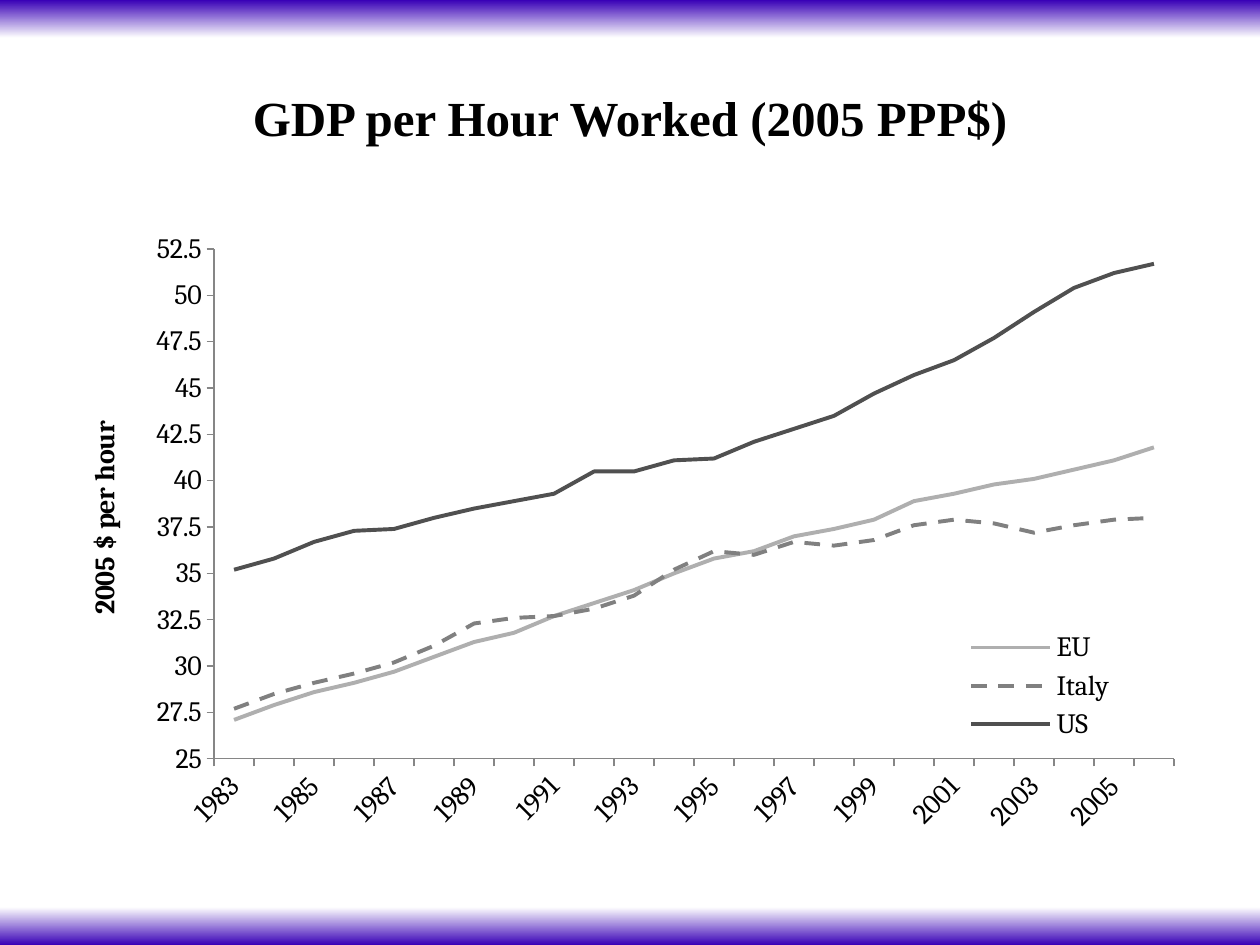
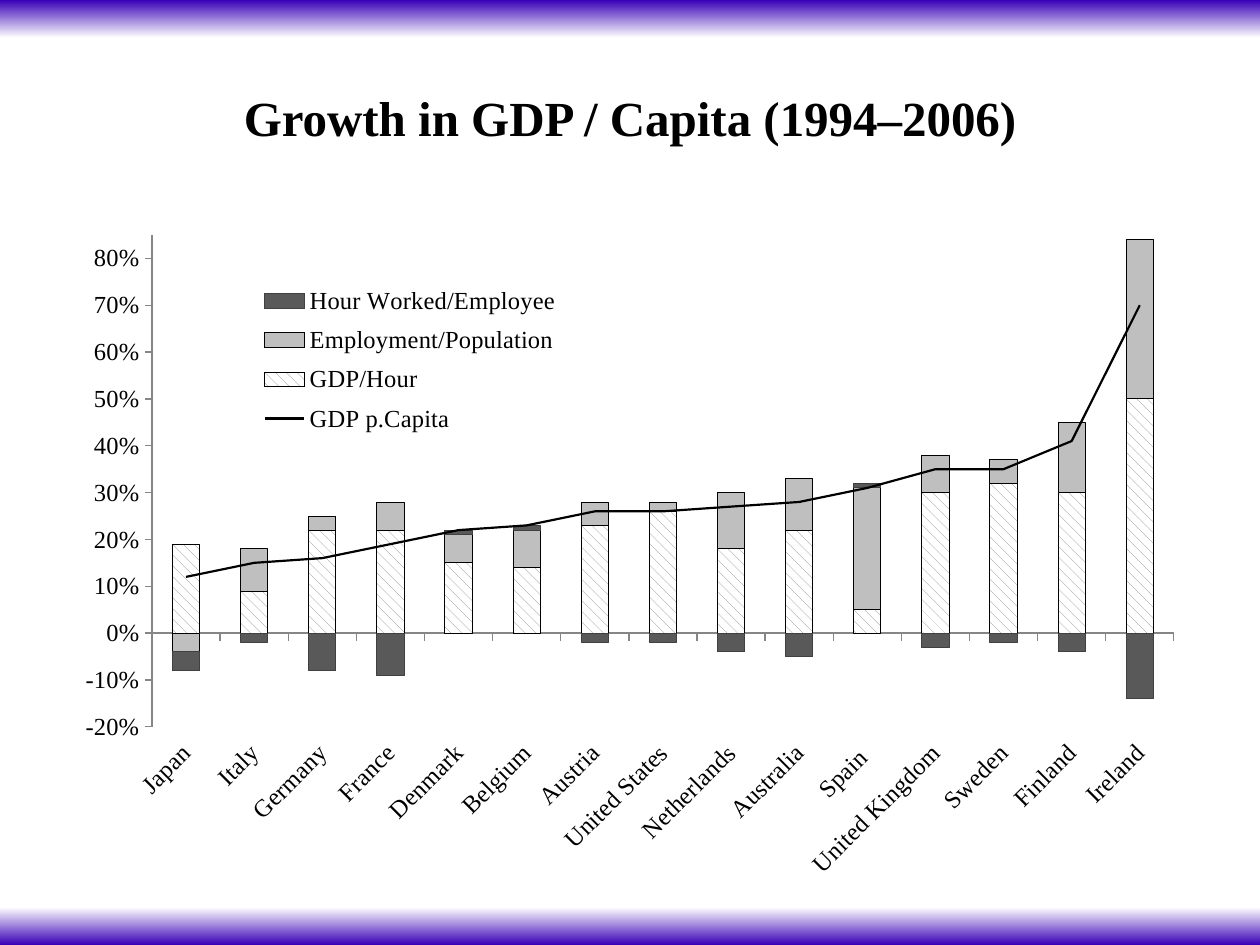
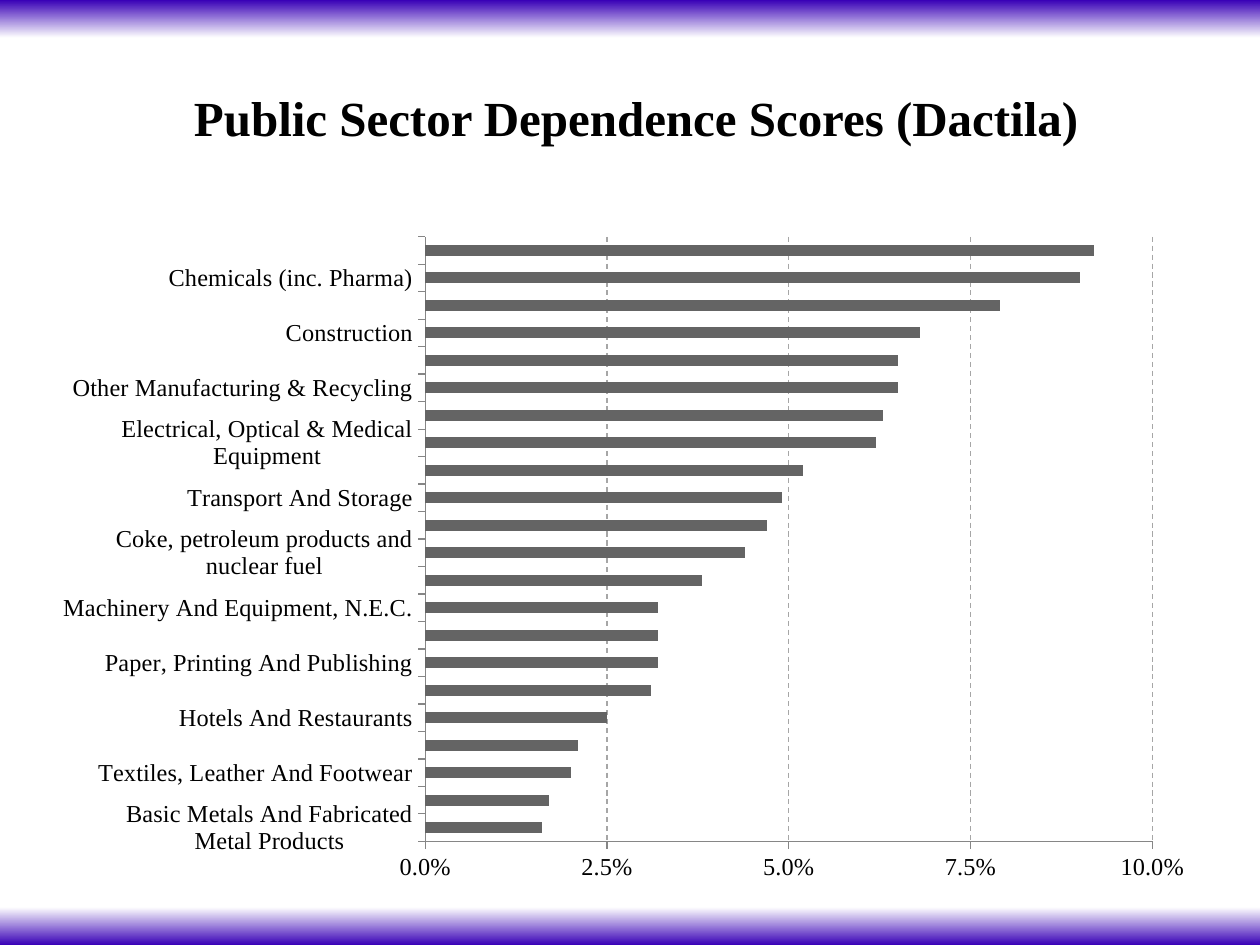
from lxml import etree
from pptx import Presentation
from pptx.chart.data import CategoryChartData
from pptx.dml.color import RGBColor
from pptx.enum.chart import (XL_CHART_TYPE as ChartType, XL_LEGEND_POSITION as LegendPos,
                             XL_MARKER_STYLE as Marker, XL_TICK_LABEL_POSITION as LabelPos,
                             XL_TICK_MARK as Tick)
from pptx.enum.dml import MSO_LINE_DASH_STYLE as Dash, MSO_PATTERN_TYPE as Pattern
from pptx.enum.text import MSO_ANCHOR, PP_ALIGN
from pptx.oxml import parse_xml
from pptx.oxml.ns import nsdecls, qn
from pptx.util import Emu, Pt

SERIF, CHART_SERIF = "Times New Roman", "Cambria"
BLACK, WHITE, PURPLE, AXIS_GREY = "000000", "FFFFFF", "3800B6", "868686"
TITLE_BOX = (63, 38, 1134, 158)
CHART_LEFT, CHART_TOP, CHART_WIDTH = 63, 221, 1134

YEARS = [str(y) for y in range(1983, 2007)]
# name: (colour, dash, values)
HOURLY_GDP = {
    "EU": ("AFAFAF", Dash.SOLID,
           [27.1, 27.9, 28.6, 29.1, 29.7, 30.5, 31.3, 31.8, 32.7, 33.4, 34.1, 35,
            35.8, 36.2, 37, 37.4, 37.9, 38.9, 39.3, 39.8, 40.1, 40.6, 41.1, 41.8]),
    "Italy": ("808080", Dash.DASH,
              [27.7, 28.5, 29.1, 29.6, 30.2, 31.1, 32.3, 32.6, 32.7, 33.1, 33.8, 35.2,
               36.2, 36, 36.7, 36.5, 36.8, 37.6, 37.9, 37.7, 37.2, 37.6, 37.9, 38]),
    "US": ("505050", Dash.SOLID,
           [35.2, 35.8, 36.7, 37.3, 37.4, 38, 38.5, 38.9, 39.3, 40.5, 40.5, 41.1,
            41.2, 42.1, 42.8, 43.5, 44.7, 45.7, 46.5, 47.7, 49.1, 50.4, 51.2, 51.7]),
}

COUNTRIES = ["Japan", "Italy", "Germany", "France", "Denmark", "Belgium", "Austria",
             "United States", "Netherlands", "Australia", "Spain ", "United Kingdom",
             "Sweden", "Finland", "Ireland"]
# The first series of the source data is unnamed and empty.
GROWTH = {
    "": [],
    "GDP/Hour": [0.19, 0.09, 0.22, 0.22, 0.15, 0.14, 0.23, 0.26, 0.18, 0.22, 0.05,
                 0.3, 0.32, 0.3, 0.5],
    "Employment/Population": [-0.04, 0.09, 0.03, 0.06, 0.06, 0.08, 0.05, 0.02, 0.12,
                              0.11, 0.26, 0.08, 0.05, 0.15, 0.34],
    "Hour Worked/Employee": [-0.04, -0.02, -0.08, -0.09, 0.01, 0.01, -0.02, -0.02,
                             -0.04, -0.05, 0.01, -0.03, -0.02, -0.04, -0.14],
    "GDP p.Capita": [0.12, 0.15, 0.16, 0.19, 0.22, 0.23, 0.26, 0.26, 0.27, 0.28,
                     0.31, 0.35, 0.35, 0.41, 0.7],
}

SECTOR_SCORES = {
    "Basic Metals And Fabricated Metal Products": 0.016,
    "Wood And Products Of Wood And Cork": 0.017,
    "Textiles, Leather And Footwear": 0.02,
    "Rubber and Plastic Products": 0.021,
    "Hotels And Restaurants": 0.025,
    "Wholesale and Retail Trade": 0.031,
    "Paper, Printing And Publishing": 0.032,
    "Mining And Quarrying": 0.032,
    "Machinery And Equipment, N.E.C.": 0.032,
    "Food Products, Beverages And Tobacco": 0.038,
    "Coke, petroleum products and nuclear fuel": 0.044,
    "Other Business Service Activities": 0.047,
    "Transport And Storage": 0.049,
    "Post And Telecommunications": 0.052,
    "Electrical, Optical & Medical Equipment": 0.062,
    "Financial Intermediation": 0.063,
    "Other Manufacturing & Recycling": 0.065,
    "Automotive": 0.065,
    "Construction": 0.068,
    "Electricity, Gas AndWater Supply": 0.079,
    "Chemicals (inc. Pharma)": 0.09,
    "Agriculture, Hunting, Forestry And Fishing": 0.092,
}


def px(n):
    return Emu(round(n * 914400 / 126))


def rgb(color):
    return RGBColor.from_string(color)


def set_line(fmt, color, width, dash=None):
    fmt.line.color.rgb = rgb(color)
    fmt.line.width = Pt(width)
    if dash is not None:
        fmt.line.dash_style = dash


def set_fill(fmt, color):
    fmt.fill.solid()
    fmt.fill.fore_color.rgb = rgb(color)


def paint_background(master):
    """Fade purple bands into white at the top and bottom edges."""
    fill = master.background.fill
    fill.gradient()
    fill.gradient_angle = 90
    stops = next(master.element.iter(qn("a:gsLst")))
    for stop in list(stops):
        stops.remove(stop)
    for percent, color in ((0, PURPLE), (4, WHITE), (50, WHITE), (96, WHITE), (100, PURPLE)):
        stops.append(parse_xml(f'<a:gs {nsdecls("a")} pos="{percent * 1000}">'
                               f'<a:srgbClr val="{color}"/></a:gs>'))


def add_titled_slide(prs, title):
    s = prs.slides.add_slide(prs.slide_layouts[5])
    sp = s.shapes.title
    sp.left, sp.top, sp.width, sp.height = map(px, TITLE_BOX)
    tf = sp.text_frame
    tf.text = title
    tf.vertical_anchor = MSO_ANCHOR.MIDDLE
    p = tf.paragraphs[0]
    p.alignment = PP_ALIGN.CENTER
    p.font.name, p.font.size, p.font.bold = SERIF, Pt(28), True
    p.font.color.rgb = rgb(BLACK)
    return s


def place(element, height, box, index=1, inner=False):
    """Lay out a chart part at a px box (or point) within a chart of the given height."""
    for old in element.findall(qn("c:layout")):
        element.remove(old)
    layout = etree.Element(qn("c:layout"))
    manual = etree.SubElement(layout, qn("c:manualLayout"))
    settings = [("layoutTarget", "inner")] if inner else []
    settings += [("xMode", "edge"), ("yMode", "edge")]
    totals = (CHART_WIDTH, height) * 2
    settings += [(tag, f"{n / total:.4f}") for tag, n, total in zip("xywh", box, totals)]
    for tag, value in settings:
        etree.SubElement(manual, qn(f"c:{tag}")).set("val", value)
    element.insert(index, layout)


def add_base_chart(s, kind, height, categories, series, font, size, plot_box):
    data = CategoryChartData()
    data.categories = categories
    for name, values in series.items():
        data.add_series(name, values)
    box = map(px, (CHART_LEFT, CHART_TOP, CHART_WIDTH, height))
    chart = s.shapes.add_chart(kind, *box, data).chart
    chart.has_title = chart.has_legend = False
    chart.font.name, chart.font.size = font, Pt(size)
    chart.font.color.rgb = rgb(BLACK)
    chart.plots[0].vary_by_categories = False
    for axis in (chart.category_axis, chart.value_axis):
        axis.has_major_gridlines = False
        axis.major_tick_mark, axis.minor_tick_mark = Tick.OUTSIDE, Tick.NONE
        set_line(axis.format, AXIS_GREY, 0.75)
    plot_area = chart.plots[0]._element.getparent()
    place(plot_area, height, plot_box, index=0, inner=True)
    return chart


def scale_values(axis, low, high, step, number_format):
    axis.minimum_scale, axis.maximum_scale, axis.major_unit = low, high, step
    axis.tick_labels.number_format = number_format
    axis.tick_labels.number_format_is_linked = False


def slant_labels(axis):
    axis.tick_labels.font.color.rgb = rgb(BLACK)
    next(axis._element.iter(qn("a:bodyPr"))).set("rot", "-2700000")


def add_legend(chart, position, height, box):
    chart.has_legend = True
    chart.legend.position = position
    chart.legend.include_in_layout = True
    place(chart.legend._element, height, box)


def drop_legend_entry(chart, index):
    chart.legend._element.insert(1, parse_xml(
        f'<c:legendEntry {nsdecls("c")}><c:idx val="{index}"/><c:delete val="1"/>'
        '</c:legendEntry>'))


def move_last_series_to_line(chart):
    bars = chart.plots[0]._element
    ser = bars.findall(qn("c:ser"))[-1]
    for tag in ("c:invertIfNegative", "c:spPr"):
        for child in ser.findall(qn(tag)):
            ser.remove(child)
    line = parse_xml(f'<c:lineChart {nsdecls("c")}><c:grouping val="standard"/>'
                     '<c:varyColors val="0"/></c:lineChart>')
    line.append(ser)
    etree.SubElement(line, qn("c:marker")).set("val", "1")
    for ax in bars.findall(qn("c:axId")):
        etree.SubElement(line, qn("c:axId")).set("val", ax.get("val"))
    bars.addnext(line)
    return chart.plots[1].series[0]


def build_hourly_gdp(prs):
    s = add_titled_slide(prs, "GDP per Hour Worked (2005 PPP$)")
    height = 624
    values = {name: row[2] for name, row in HOURLY_GDP.items()}
    chart = add_base_chart(s, ChartType.LINE, height, YEARS, values, CHART_SERIF, 16,
                           (151, 28, 960, 510))
    for ser, (color, dash, _) in zip(chart.plots[0].series, HOURLY_GDP.values()):
        set_line(ser.format, color, 2.25, dash)
        ser.marker.style = Marker.NONE
        ser.smooth = False
    slant_labels(chart.category_axis)
    axis = chart.value_axis
    scale_values(axis, 25, 52.5, 2.5, "General")
    tf = axis.axis_title.text_frame
    tf.text = "2005 $ per hour"
    font = tf.paragraphs[0].font
    font.name, font.size, font.bold = CHART_SERIF, Pt(16), True
    font.color.rgb = rgb(BLACK)
    next(axis.axis_title._element.iter(qn("a:bodyPr"))).set("rot", "-5400000")
    place(axis.axis_title._element, height, (18, 195))
    add_legend(chart, LegendPos.RIGHT, height, (897, 404, 160, 122))


def build_growth(prs):
    s = add_titled_slide(prs, "Growth in GDP / Capita (1994–2006)")
    height = 670
    chart = add_base_chart(s, ChartType.COLUMN_STACKED, height, COUNTRIES, GROWTH, SERIF, 14,
                           (89, 14, 1022, 492))
    capita = move_last_series_to_line(chart)
    set_line(capita.format, BLACK, 1.25)
    capita.marker.style = Marker.NONE
    capita.smooth = False

    bars = chart.plots[0]
    bars.gap_width, bars.overlap = 150, 100
    _, hourly, employment, hours = bars.series
    fill = hourly.format.fill
    fill.patterned()
    fill.pattern = Pattern.DASHED_DOWNWARD_DIAGONAL
    fill.fore_color.rgb, fill.back_color.rgb = rgb("848484"), rgb(WHITE)
    set_fill(employment.format, "BFBFBF")
    set_fill(hours.format, "595959")
    for ser, outline in ((hourly, BLACK), (employment, BLACK), (hours, "404040")):
        ser.invert_if_negative = False
        set_line(ser.format, outline, 0.5)

    chart.category_axis.tick_label_position = LabelPos.LOW
    slant_labels(chart.category_axis)
    scale_values(chart.value_axis, -0.2, 0.85, 0.1, "0%")
    add_legend(chart, LegendPos.LEFT, height, (192, 55, 310, 168))
    drop_legend_entry(chart, 0)


def build_sector_scores(prs):
    s = add_titled_slide(prs, " Public Sector Dependence Scores (Dactila)")
    chart = add_base_chart(s, ChartType.BAR_CLUSTERED, 660, list(SECTOR_SCORES),
                           {"Series 1": SECTOR_SCORES.values()}, SERIF, 14,
                           (354, 16, 735, 611))
    bars = chart.plots[0]
    bars.gap_width = 150
    bars.series[0].invert_if_negative = False
    set_fill(bars.series[0].format, "646464")
    axis = chart.value_axis
    scale_values(axis, 0, 0.1, 0.025, "0.0%")
    axis.has_major_gridlines = True
    set_line(axis.major_gridlines.format, "A6A6A6", 0.75, Dash.DASH)


def main():
    prs = Presentation()
    prs.slide_width, prs.slide_height = px(1260), px(945)
    paint_background(prs.slide_master)
    build_hourly_gdp(prs)
    build_growth(prs)
    build_sector_scores(prs)
    prs.save("out.pptx")


if __name__ == "__main__":
    main()
